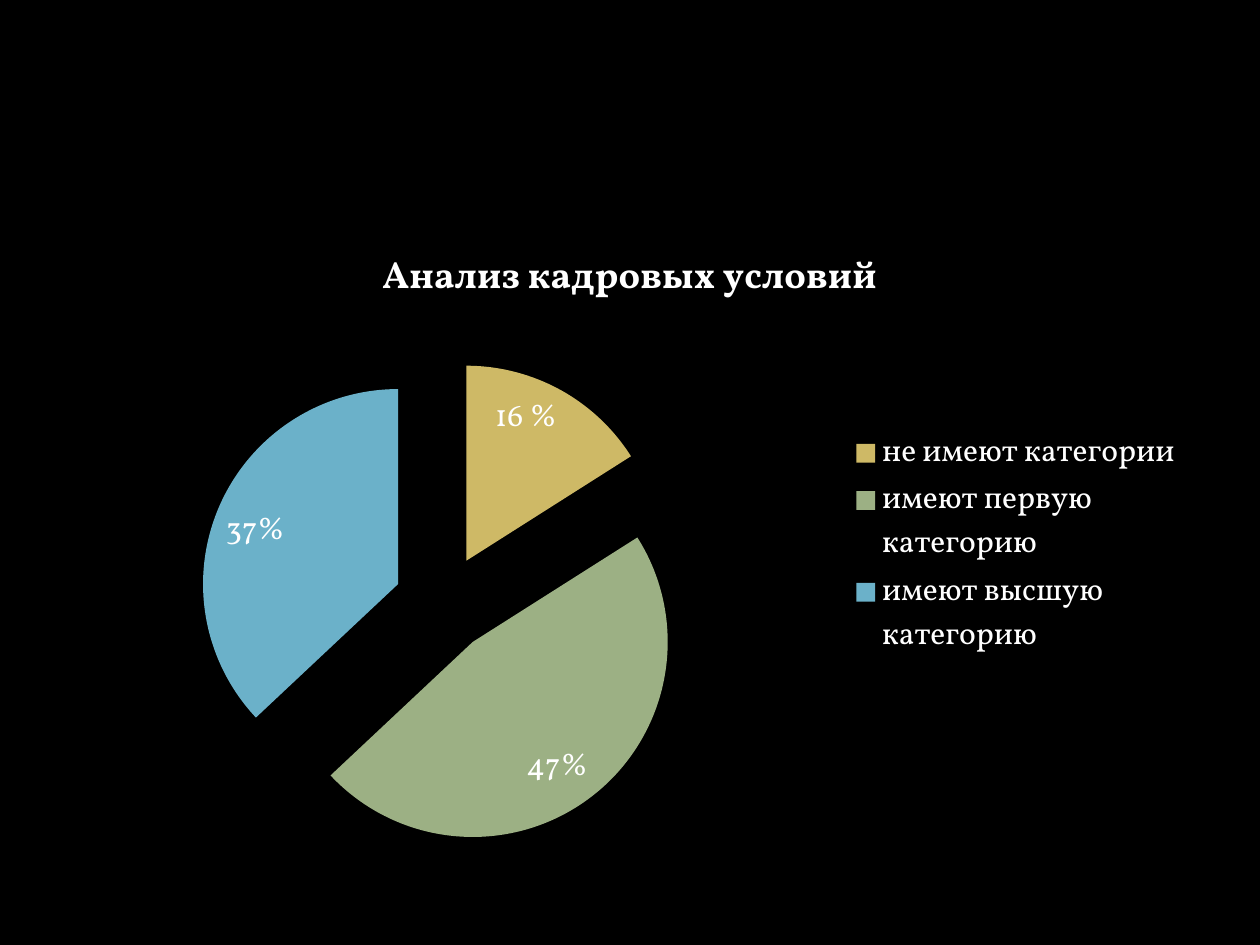
from lxml.etree import SubElement
from pptx import Presentation
from pptx.chart.data import CategoryChartData
from pptx.dml.color import RGBColor
from pptx.enum.chart import XL_CHART_TYPE as Kind
from pptx.enum.chart import XL_LABEL_POSITION as Spot
from pptx.enum.chart import XL_LEGEND_POSITION as Side
from pptx.oxml.ns import qn
from pptx.util import Cm, Pt

BLACK = RGBColor(0x00, 0x00, 0x00)
WHITE = RGBColor(0xFF, 0xFF, 0xFF)
GOLD = RGBColor(0xCE, 0xB9, 0x66)
GREEN = RGBColor(0x9C, 0xB0, 0x84)
BLUE = RGBColor(0x6B, 0xB1, 0xC9)

# category, percent, label, colour
STAFF = [
    ("не имеют категории", 16, "16 %", GOLD),
    ("имеют первую категорию", 47, "47%", GREEN),
    ("имеют высшую категорию", 37, "37%", BLUE),
]


def place(node, x, y, w, h, inner=False):
    """Give a plot area or legend a fixed box, in fractions of the chart."""
    for old in node.findall(qn("c:layout")):
        node.remove(old)
    box = SubElement(node, qn("c:layout"))
    # the layout comes first in a plot area, after the position in a legend
    node.insert(0 if inner else 1, box)
    man = SubElement(box, qn("c:manualLayout"))
    rules = [("layoutTarget", "inner")] if inner else []
    rules += [("xMode", "edge"), ("yMode", "edge"),
              ("x", x), ("y", y), ("w", w), ("h", h)]
    for tag, val in rules:
        SubElement(man, qn("c:" + tag)).set("val", str(val))


class Deck:
    face = "Vollkorn"
    size = 18
    ink = WHITE

    def __init__(self):
        self.prs = Presentation()
        self.prs.slide_width, self.prs.slide_height = Cm(25.4), Cm(19.05)

    def page(self, color):
        self.slide = self.prs.slides.add_slide(self.prs.slide_layouts[6])
        fill = self.slide.background.fill
        fill.solid()
        fill.fore_color.rgb = color

    def style(self, font, size=None, bold=False):
        font.name, font.size, font.bold = self.face, Pt(size or self.size), bold
        font.color.rgb = self.ink

    def pie(self, title, name, rows, x, y, w, h):
        data = CategoryChartData()
        data.categories = [row[0] for row in rows]
        data.add_series(name, [row[1] for row in rows])
        chart = self.slide.shapes.add_chart(
            Kind.PIE_EXPLODED, Cm(x), Cm(y), Cm(w), Cm(h), data).chart
        self.style(chart.font)

        chart.has_title = True
        head = chart.chart_title.text_frame
        head.text = title
        self.style(head.paragraphs[0].font, 21.6, True)

        chart.has_legend = True
        chart.legend.position = Side.RIGHT
        chart.legend.include_in_layout = False
        self.style(chart.legend.font)

        plot = chart.plots[0]
        plot.vary_by_categories = True
        series = plot.series[0]
        for node in series._element.findall(qn("c:explosion")):
            node.set("val", "25")
        for i, (_, _, text, color) in enumerate(rows):
            point = series.points[i]
            point.format.fill.solid()
            point.format.fill.fore_color.rgb = color
            label = point.data_label
            label.text_frame.text = text
            self.style(label.text_frame.paragraphs[0].font)
            label.position = Spot.INSIDE_END
        return chart


def main():
    deck = Deck()
    deck.page(BLACK)
    chart = deck.pie("Анализ кадровых условий", "Продажи", STAFF,
                     1.27, 4.45, 22.86, 13.08)
    area = chart._chartSpace.chart.plotArea
    place(area, 0.12, 0.21, 0.43, 0.76, inner=True)
    place(chart.legend._element, 0.69, 0.32, 0.3, 0.36)
    deck.prs.save("out.pptx")


if __name__ == "__main__":
    main()
